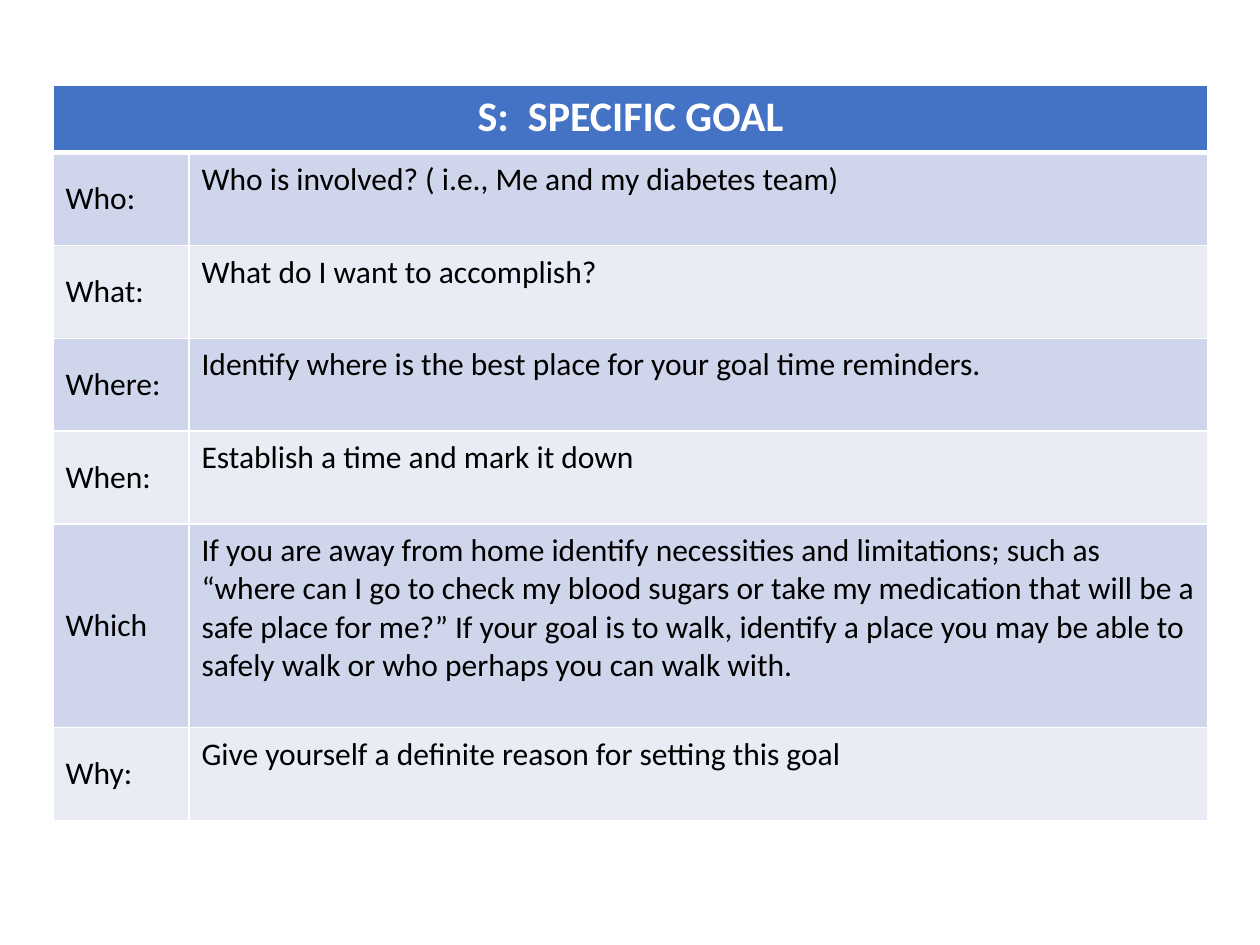
from lxml import etree
from pptx import Presentation
from pptx.dml.color import RGBColor
from pptx.enum.text import MSO_ANCHOR, PP_ALIGN
from pptx.oxml.ns import qn
from pptx.util import Cm, Pt

WHITE = RGBColor(0xFF, 0xFF, 0xFF)
BLACK = RGBColor(0x00, 0x00, 0x00)
HEADER_BLUE = RGBColor(0x44, 0x72, 0xC4)
BANDS = (RGBColor(0xCF, 0xD5, 0xEA), RGBColor(0xE9, 0xEB, 0xF5))
TOP, MIDDLE = MSO_ANCHOR.TOP, MSO_ANCHOR.MIDDLE
LEFT, CENTER = PP_ALIGN.LEFT, PP_ALIGN.CENTER

TITLE = "S:  SPECIFIC GOAL"
QUESTIONS = [
    ("Who:", "Who is involved? ( i.e., Me and my diabetes team)"),
    ("What:", "What do I want to accomplish?"),
    ("Where:", "Identify where is the best place for your goal time reminders."),
    ("When:", "Establish a time and mark it down"),
    ("Which", "If you are away from home identify necessities and limitations; such as "
              "“where can I go to check my blood sugars or take my medication that will "
              "be a safe place for me?” If your goal is to walk, identify a place you may "
              "be able to safely walk or who perhaps you can walk with."),
    ("Why:", "Give yourself a definite reason for setting this goal"),
]
COLUMN_WIDTHS = (2.74, 20.54)
ROW_HEIGHTS = (1.37, 1.87, 1.87, 1.87, 1.87, 4.11, 1.87)


def set_borders(cell, widths):
    """Draw white borders; widths maps a side (L, R, T, B) to points."""
    properties = cell._tc.get_or_add_tcPr()
    for side, width in widths.items():
        line = etree.SubElement(properties, qn(f"a:ln{side}"), w=str(Pt(width)))
        paint = etree.SubElement(line, qn("a:solidFill"))
        etree.SubElement(paint, qn("a:srgbClr"), val=str(WHITE))


def fill_cell(cell, text, fill, size, color, bold, align, anchor):
    cell.fill.solid()
    cell.fill.fore_color.rgb = fill
    cell.vertical_anchor = anchor
    cell.text_frame.text = text
    paragraph = cell.text_frame.paragraphs[0]
    paragraph.alignment = align
    font = paragraph.runs[0].font
    font.name = "Calibri"
    font.size = Pt(size)
    font.bold = bold
    font.color.rgb = color


prs = Presentation()
prs.slide_width, prs.slide_height = Cm(25.4), Cm(19.05)
slide = prs.slides.add_slide(prs.slide_layouts[6])

goal_table = slide.shapes.add_table(
    len(ROW_HEIGHTS), len(COLUMN_WIDTHS), Cm(1.07), Cm(1.71),
    Cm(sum(COLUMN_WIDTHS)), Cm(sum(ROW_HEIGHTS))).table
for column, width in zip(goal_table.columns, COLUMN_WIDTHS):
    column.width = Cm(width)
for row, height in zip(goal_table.rows, ROW_HEIGHTS):
    row.height = Cm(height)

for row_index, row in enumerate(goal_table.rows):
    for cell in row.cells:
        set_borders(cell, {"L": 1, "R": 1,
                           "T": 3 if row_index == 1 else 1,
                           "B": 3 if row_index == 0 else 1})

header = goal_table.cell(0, 0)
header.merge(goal_table.cell(0, 1))
fill_cell(header, TITLE, HEADER_BLUE, 24, WHITE, True, CENTER, TOP)

for row_index, (label, answer) in enumerate(QUESTIONS, start=1):
    band = BANDS[(row_index - 1) % 2]
    label_cell = goal_table.cell(row_index, 0)
    answer_cell = goal_table.cell(row_index, 1)
    fill_cell(label_cell, label, band, 18, BLACK, False, LEFT, MIDDLE)
    fill_cell(answer_cell, answer, band, 18, BLACK, False, LEFT, TOP)
    answer_cell.margin_top = Cm(0.15)

prs.save("out.pptx")
